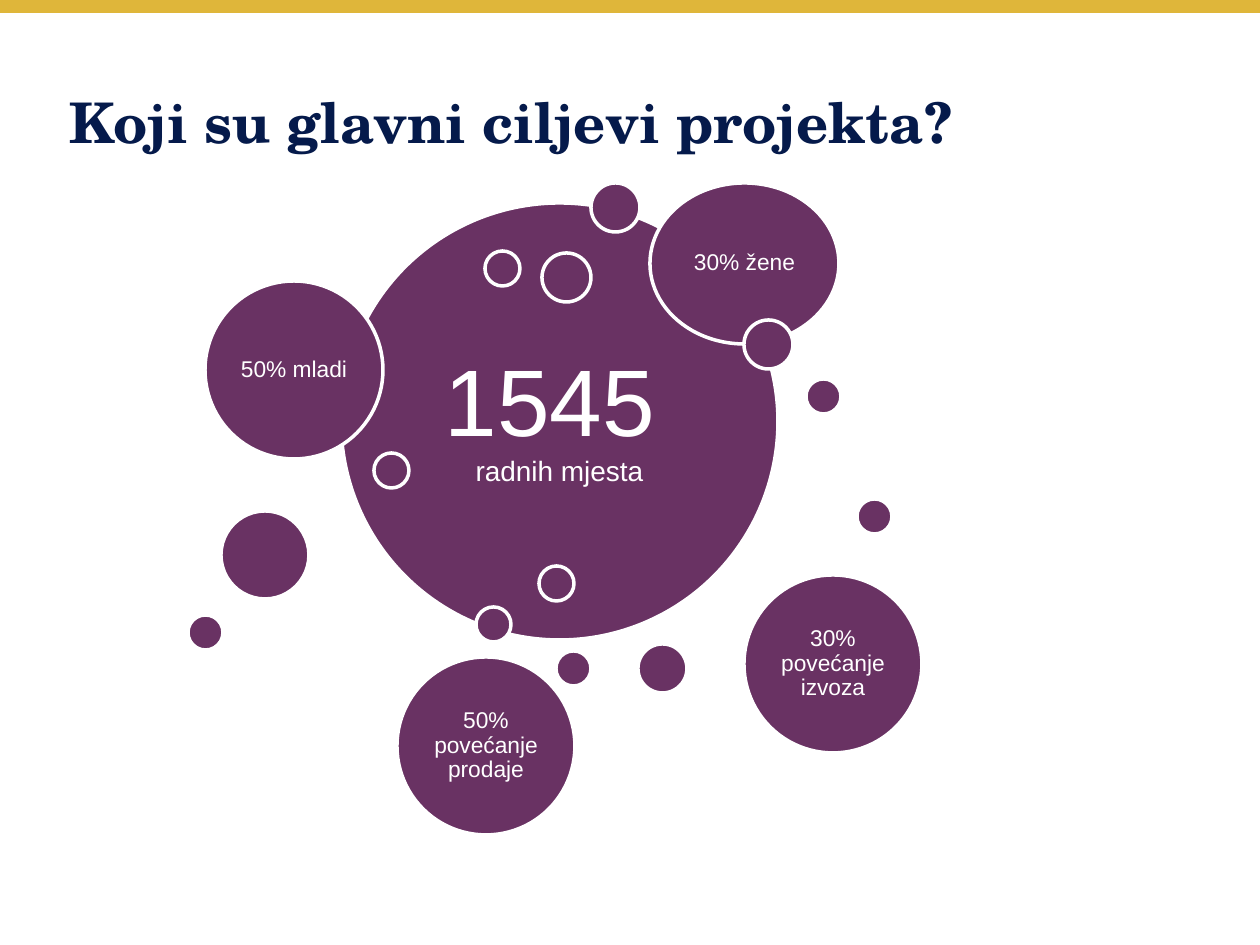
from collections import namedtuple
from dataclasses import dataclass

from lxml import etree
from pptx import Presentation
from pptx.dml.color import RGBColor
from pptx.enum.shapes import MSO_CONNECTOR, MSO_SHAPE
from pptx.enum.text import MSO_ANCHOR, PP_ALIGN
from pptx.oxml.ns import qn
from pptx.util import Pt

STRAIGHT = MSO_CONNECTOR.STRAIGHT
ELLIPSE = MSO_SHAPE.OVAL
MIDDLE = MSO_ANCHOR.MIDDLE
LEFT, CENTER = PP_ALIGN.LEFT, PP_ALIGN.CENTER

EMU_PER_PX = 914400 / 126
PAGE_WIDTH, PAGE_HEIGHT = 1260, 945

Box = namedtuple("Box", "left top width height")


@dataclass(frozen=True)
class Theme:
    gold: RGBColor = RGBColor(0xDF, 0xB6, 0x3A)
    navy: RGBColor = RGBColor(0x05, 0x1A, 0x4B)
    plum: RGBColor = RGBColor(0x69, 0x32, 0x63)
    white: RGBColor = RGBColor(0xFF, 0xFF, 0xFF)
    title_font: str = "TeX Gyre Schola"
    body_font: str = "Arial"
    title_size: int = 32
    number_size: int = 54
    gap_size: int = 39
    caption_size: int = 16
    label_size: int = 13
    band_width: int = 8
    outline_width: int = 2


THEME = Theme()

TINY, SMALL, MEDIUM, LARGE, CORE = 35, 49, 88, 178, 437

BUBBLES = [
    (403, 0, SMALL, ""),
    (288, 424, TINY, ""),
    (618, 196, TINY, ""),
    (450, 461, SMALL, ""),
    (297, 68, TINY, ""),
    (186, 270, TINY, ""),
    (17, 98, LARGE, "50% mladi"),
    (354, 70, SMALL, ""),
    (33, 328, MEDIUM, ""),
    (462, 0, (189, 161), "30% žene"),
    (556, 137, SMALL, ""),
    (0, 432, TINY, ""),
    (351, 383, TINY, ""),
    (556, 392, LARGE, "30% povećanje izvoza"),
    (669, 316, TINY, ""),
    (209, 474, LARGE, "50% povećanje prodaje"),
    (368, 468, TINY, ""),
]


def px(length):
    return round(length * EMU_PER_PX)


def style_span(span, font, size, color, bold=False):
    span.font.name = font
    span.font.size = Pt(size)
    span.font.color.rgb = color
    span.font.bold = bold


def set_frame(frame, inset):
    frame.word_wrap = True
    frame.vertical_anchor = MIDDLE
    frame.margin_left = frame.margin_right = px(inset)
    frame.margin_top = frame.margin_bottom = px(inset)


def add_band(page, box):
    middle = px(box.top + box.height / 2)
    band = page.shapes.add_connector(
        STRAIGHT, px(box.left), middle, px(box.left + box.width), middle)
    band.line.color.rgb = THEME.gold
    band.line.width = Pt(THEME.band_width)
    etree.SubElement(band.element.spPr, qn("a:effectLst"))


def add_title(page, box):
    title = page.shapes.title
    title.left, title.top, title.width, title.height = map(px, box)
    set_frame(title.text_frame, 6)
    title.text_frame.text = "Koji su glavni ciljevi projekta?"
    para = title.text_frame.paragraphs[0]
    para.alignment = LEFT
    style_span(para.runs[0], THEME.title_font, THEME.title_size, THEME.navy, True)


def add_bubble(page, box, inset=6):
    bubble = page.shapes.add_shape(ELLIPSE, *map(px, box))
    bubble.shadow.inherit = False
    bubble.fill.solid()
    bubble.fill.fore_color.rgb = THEME.plum
    bubble.line.color.rgb = THEME.white
    bubble.line.width = Pt(THEME.outline_width)
    set_frame(bubble.text_frame, inset)
    para = bubble.text_frame.paragraphs[0]
    para.alignment = CENTER
    para.line_spacing = 0.9
    return para


def add_span(para, text, size):
    span = para.add_run()
    span.text = text
    style_span(span, THEME.body_font, size, THEME.white)


def add_core(page, box):
    para = add_bubble(page, box, 29)
    add_span(para, "1545", THEME.number_size)
    add_span(para, " ", THEME.gap_size)
    para.add_line_break()
    add_span(para, "radnih mjesta", THEME.caption_size)


def add_goals(page, box):
    add_core(page, Box(box.left + 153, box.top + 20, CORE, CORE))
    for left, top, size, label in BUBBLES:
        width, height = size if isinstance(size, tuple) else (size, size)
        para = add_bubble(page, Box(box.left + left, box.top + top, width, height))
        if label:
            add_span(para, label, THEME.label_size)


def main():
    deck = Presentation()
    deck.slide_width, deck.slide_height = px(PAGE_WIDTH), px(PAGE_HEIGHT)
    page = deck.slides.add_slide(deck.slide_layouts.get_by_name("Title Only"))
    add_band(page, Box(0, 0, PAGE_WIDTH, 12))
    add_title(page, Box(63, 60, 1134, 122))
    add_goals(page, Box(188, 183, 734, 652))
    deck.save("out.pptx")


if __name__ == "__main__":
    main()
